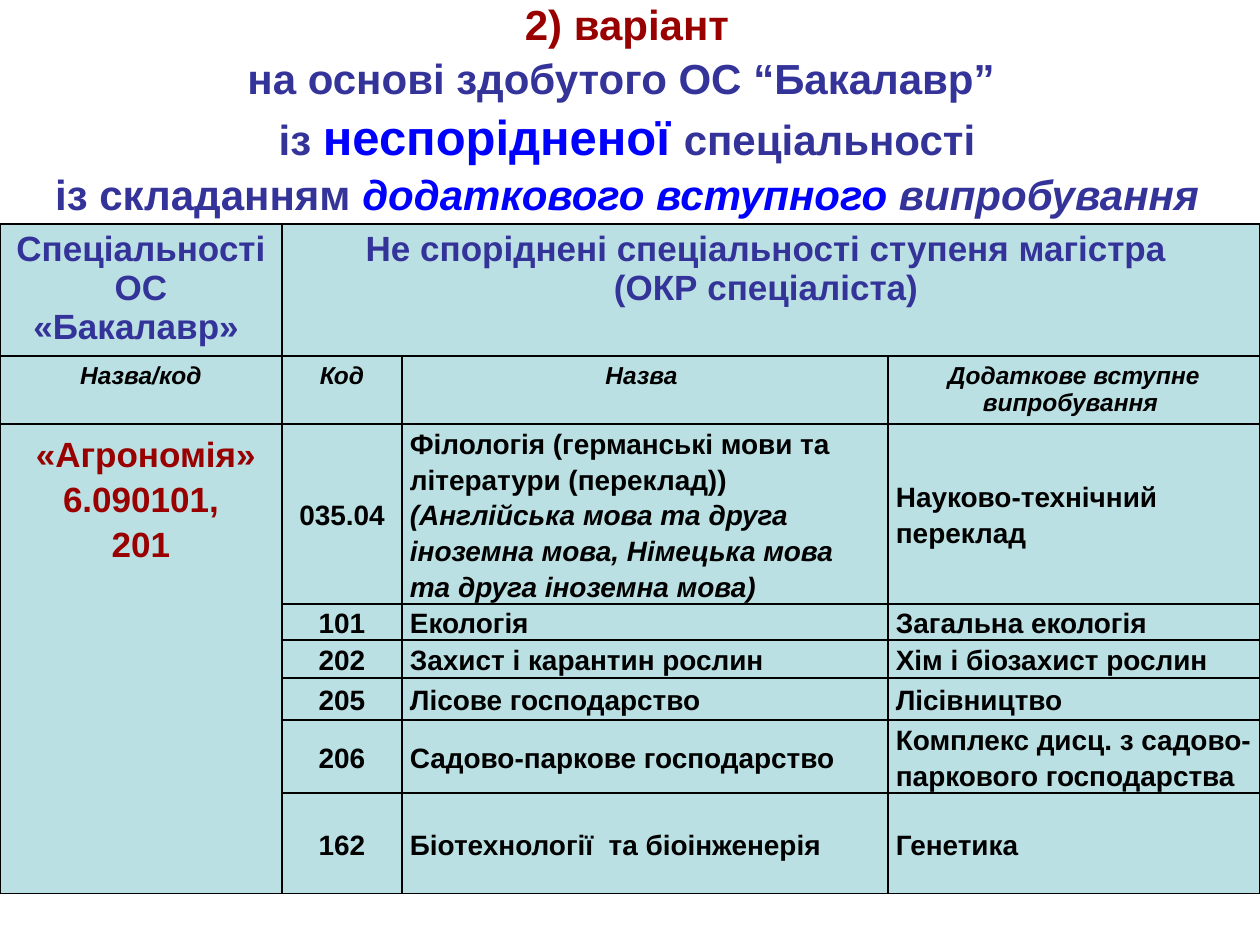
"""Build the slide on admission from an unrelated bachelor's speciality."""
from itertools import product

from lxml.etree import SubElement
from pptx import Presentation
from pptx.dml.color import RGBColor
from pptx.enum.text import MSO_ANCHOR, MSO_AUTO_SIZE, PP_ALIGN
from pptx.oxml.ns import qn
from pptx.util import Pt

EMU_PER_PIXEL = 914400 // 126
COLORS = {"indigo": "333399", "maroon": "990000", "blue": "0000FF",
          "black": "000000", "aqua": "BBE0E3"}
COLUMNS = [282, 120, 486, 372]
ROWS = [132, 68, 180, 36, 38, 42, 73, 101]
TITLE = [
    [("2) варіант", 24, "maroon", False)],
    [("на основі здобутого ОС “Бакалавр” ", 24, "indigo", False)],
    [("із ", 24, "indigo", False), ("неспорідненої ", 28, "blue", False),
     ("спеціальності", 24, "indigo", False)],
    [("із складанням ", 24, "indigo", False),
     ("додаткового вступного", 24, "blue", True),
     (" випробування", 24, "indigo", True)],
]
HEADINGS = ["Спеціальності ОС «Бакалавр» ",
            "Не споріднені спеціальності ступеня магістра \n(ОКР спеціаліста) "]
SUBHEADINGS = ["Назва/код", " Код ", "Назва ", "Додаткове вступне випробування "]
BACHELOR = " «Агрономія» 6.090101,\n201"
SPECIALITIES = [
    ("035.04", "Філологія (германські мови та літератури (переклад))\n"
     "(Англійська мова та друга іноземна мова, Німецька мова та друга іноземна мова)",
     "Науково-технічний переклад"),
    ("101", "Екологія", "Загальна екологія"),
    ("202", "Захист і карантин рослин", "Хім і біозахист рослин"),
    ("205", "Лісове господарство", "Лісівництво"),
    ("206", "Садово-паркове господарство",
     "Комплекс дисц. з садово-паркового господарства"),
    ("162", "Біотехнології  та біоінженерія", "Генетика"),
]


def px(length):
    """Turn pixels into EMU."""
    return length * EMU_PER_PIXEL


class SlideBuilder:
    """Hold the style and the current slide."""

    def __init__(self, presentation, font_name="Arial"):
        self.slide = presentation.slides.add_slide(presentation.slide_layouts[5])
        self.font_name = font_name

    def format_run(self, run, size, color, italic=False):
        """Apply the bold slide font to a run."""
        font = run.font
        font.name, font.size = self.font_name, Pt(size)
        font.bold, font.italic = True, italic
        font.color.rgb = RGBColor.from_string(COLORS[color])

    def title(self, left, top, width, height, lines):
        """Place and fill the title."""
        shape = self.slide.shapes.title
        shape.left, shape.top, shape.width, shape.height = map(
            px, (left, top, width, height))
        frame = shape.text_frame
        frame.auto_size = MSO_AUTO_SIZE.NONE
        frame.vertical_anchor = MSO_ANCHOR.MIDDLE
        frame.margin_top = frame.margin_bottom = 0
        frame.text = "\n".join("" for _ in lines)
        for paragraph, runs in zip(frame.paragraphs, lines):
            paragraph.alignment = PP_ALIGN.CENTER
            paragraph.line_spacing = 1.07
            for text, size, color, italic in runs:
                run = paragraph.add_run()
                run.text = text
                self.format_run(run, size, color, italic)

    def table(self, left, top, columns, rows):
        """Add a filled and bordered table."""
        table = self.slide.shapes.add_table(
            len(rows), len(columns), px(left), px(top),
            px(sum(columns)), px(sum(rows))).table
        for column, width in zip(table.columns, columns):
            column.width = px(width)
        for row, height in zip(table.rows, rows):
            row.height = px(height)
        for row, column in product(range(len(rows)), range(len(columns))):
            cell = table.cell(row, column)
            self.border(cell)
            cell.fill.solid()
            cell.fill.fore_color.rgb = RGBColor.from_string(COLORS["aqua"])
            cell.margin_top = cell.margin_bottom = px(6 if row < 2 else 0)
            if row > 1 and column:
                cell.margin_left = cell.margin_right = px(8)
        return table

    def border(self, cell):
        """Draw a thin line on each side of a cell."""
        properties = cell._tc.get_or_add_tcPr()
        for side in ("a:lnL", "a:lnR", "a:lnT", "a:lnB"):
            line = SubElement(properties, qn(side), w=str(Pt(1)))
            fill = SubElement(line, qn("a:solidFill"))
            SubElement(fill, qn("a:srgbClr"), val=COLORS["black"])

    def cell_text(self, cell, text, size, color, italic=False, centered=True,
                  spacing=1.0, anchor=MSO_ANCHOR.TOP):
        """Write formatted text into a cell."""
        cell.text_frame.text = text
        cell.vertical_anchor = anchor
        for paragraph in cell.text_frame.paragraphs:
            paragraph.alignment = PP_ALIGN.CENTER if centered else PP_ALIGN.LEFT
            paragraph.line_spacing = spacing
            for run in paragraph.runs:
                self.format_run(run, size, color, italic)


def main():
    """Create and save the presentation."""
    presentation = Presentation()
    presentation.slide_width, presentation.slide_height = px(1260), px(945)
    builder = SlideBuilder(presentation)
    builder.title(34, 0, 1186, 214, TITLE)

    table = builder.table(0, 224, COLUMNS, ROWS)
    table.cell(0, 1).merge(table.cell(0, 3))
    table.cell(2, 0).merge(table.cell(7, 0))
    for column, text in enumerate(HEADINGS):
        builder.cell_text(table.cell(0, column), text, 20, "indigo")
    for column, text in enumerate(SUBHEADINGS):
        builder.cell_text(table.cell(1, column), text, 14, "black", italic=True)

    bachelor_cell = table.cell(2, 0)
    bachelor_cell.margin_top = px(6)
    builder.cell_text(bachelor_cell, BACHELOR, 20, "maroon", spacing=1.15)
    for row, speciality in enumerate(SPECIALITIES, start=2):
        for column, text in enumerate(speciality, start=1):
            builder.cell_text(table.cell(row, column), text, 16, "black",
                              centered=column == 1, spacing=1.15,
                              anchor=MSO_ANCHOR.MIDDLE)
    languages = table.cell(2, 2).text_frame.paragraphs[1]
    languages.runs[0].font.italic = True
    presentation.save("out.pptx")


if __name__ == "__main__":
    main()
